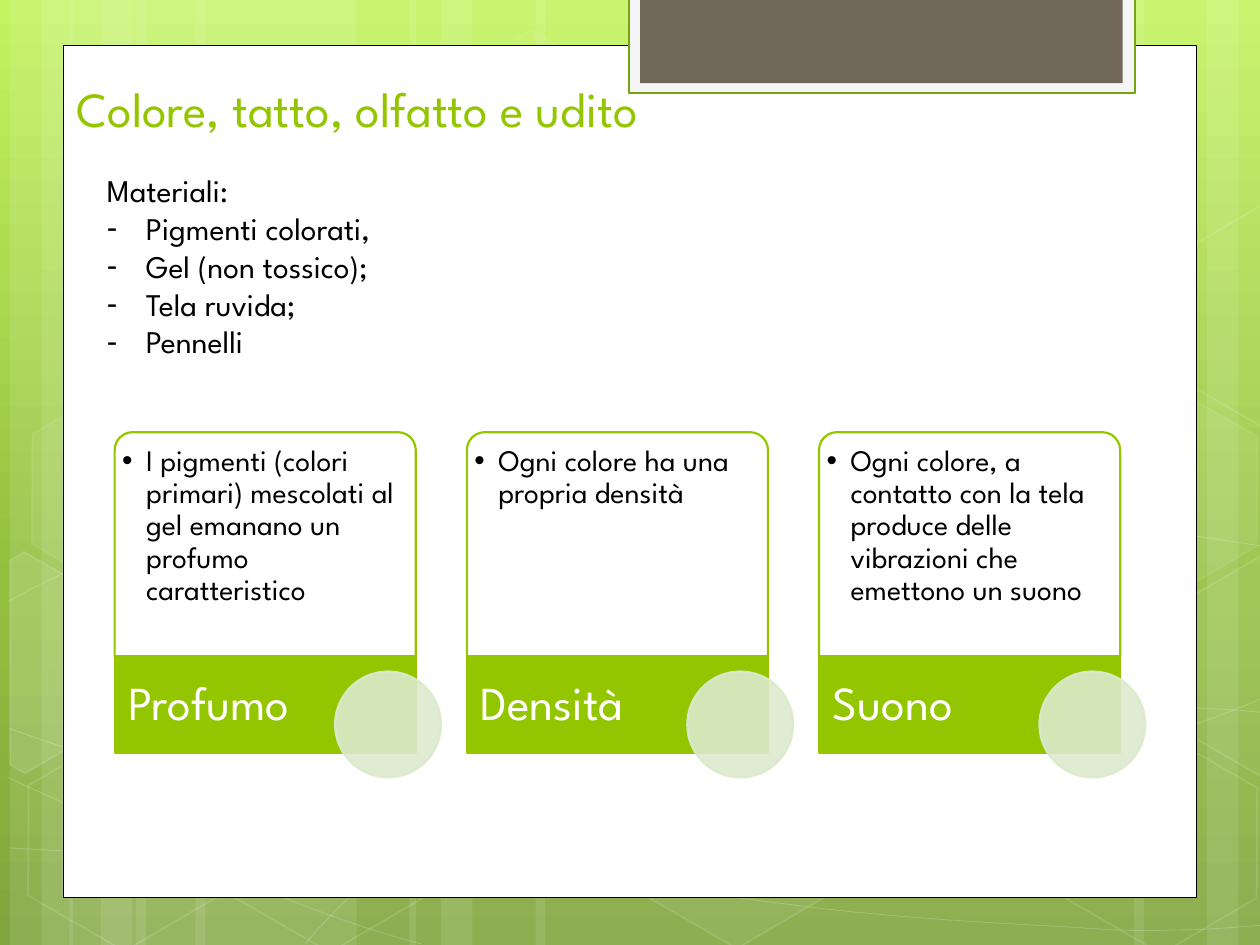
"""Build the slide on colour, touch, smell and hearing, with three captioned cards."""
from copy import deepcopy

from lxml import etree
from pptx import Presentation
from pptx import util as u
from pptx.dml.color import RGBColor
from pptx.enum import shapes, text
from pptx.oxml.ns import qn

FONT = "League Spartan"
GREEN, WHITE, BLACK, MIST = "94C600", "FFFFFF", "000000", "DCEACC"
PRESET = shapes.MSO_SHAPE
rgb = RGBColor.from_string

prs = Presentation()
prs.slide_width, prs.slide_height = u.Inches(10), u.Inches(7.5)
cell = prs.slide_width / 10
columns, rows = 10, prs.slide_height / cell
slide = prs.slides.add_slide(prs.slide_layouts[5])


def draw(outline, box=None, fill=None, fill_alpha=100, line=None, width=1, line_alpha=100, closed=True):
    """Add a preset in a grid box, or an outline through grid points, and paint it."""
    if box:
        shape = slide.shapes.add_shape(outline, *(round(v * cell) for v in box))
    else:
        (x, y), *rest = [(px * cell, py * cell) for px, py in outline]
        builder = slide.shapes.build_freeform(x, y)
        builder.add_line_segments(rest, close=closed)
        shape = builder.convert_to_shape()
    shape.shadow.inherit = False
    shape.line.width = u.Pt(width)
    paints = ((shape.fill, fill, fill_alpha, "./a:solidFill/a:srgbClr"),
              (shape.line.fill, line, line_alpha, "./a:ln/a:solidFill/a:srgbClr"))
    for paint, colour, alpha, where in paints:
        if colour is None:
            paint.background()
            continue
        paint.solid()
        paint.fore_color.rgb = rgb(colour)
        if alpha < 100:
            mark = shape._element.spPr.xpath(where)[0]
            etree.SubElement(mark, qn("a:alpha"), val=str(alpha * 1000))
    return shape


def write(box, lines, size, colour, margins=(0.1, 0.05, 0.1, 0.05), spacing=1.0, bullet=None, indent=0, first=0):
    """Add a text box in a grid box, with bullets from the paragraph numbered first."""
    frame = slide.shapes.add_textbox(*(round(v * cell) for v in box)).text_frame
    frame.word_wrap = True
    frame.margin_left, frame.margin_top, frame.margin_right, frame.margin_bottom = (
        round(m * cell) for m in margins)
    frame.text = "\n".join(lines)
    for number, paragraph in enumerate(frame.paragraphs):
        paragraph.line_spacing = spacing
        font = paragraph.runs[0].font
        font.name, font.size, font.color.rgb = FONT, u.Pt(size), rgb(colour)
        if bullet and number >= first:
            props = paragraph._p.get_or_add_pPr()
            props.set("marL", str(round(indent * cell)))
            props.set("indent", str(round(-indent * cell)))
            etree.SubElement(props, qn("a:buFont"), typeface="Arial")
            etree.SubElement(props, qn("a:buChar"), char=bullet)
    return frame


backdrop = slide.background.fill
backdrop.gradient()
backdrop.gradient_angle = 270
stops = next(slide._element.iter(qn("a:gsLst")))
stops.append(deepcopy(stops[-1]))
for stop, (position, colour) in zip(backdrop.gradient_stops, ((0, "C3F35F"), (0.62, "93BF3F"), (1, "81A53E"))):
    stop.position, stop.color.rgb = position, rgb(colour)

stripes = [(1.08, 1.75), (0.08, 0.5), (0.33, 0.83), (1.55, 1.75), (0.55, 0.5), (0.8, 0.83),
           (7.33, 1.75), (9.58, 0.5), (9, 0.83), (4.25, 3.08), (3.25, 0.5), (3.5, 0.83)]
for left, wide in stripes:
    draw(PRESET.RECTANGLE, (left, 0, wide, rows), WHITE, 10)

waves = [
    [(0.07, 6.73), (0.61, 6.76), (1.15, 6.79), (1.9, 6.78), (2.65, 6.77), (3.58, 6.75), (4.58, 6.65),
     (5.58, 6.55), (7, 6.36), (7.92, 6.17), (8.83, 5.98), (9.77, 5.68), (10.07, 5.51)],
    [(0.07, 4.77), (0.36, 4.61), (0.65, 4.46), (1.21, 4.31), (1.78, 4.16), (2.59, 3.94), (3.47, 3.87),
     (4.36, 3.8), (5.44, 3.79), (6.54, 3.87), (7.64, 3.95), (9.47, 4.26), (10.07, 4.34)],
    [(0.06, 6.17), (1.27, 6.72), (2.47, 7.27), (3.34, 7.49)],
    [(0.07, 5.78), (0.38, 5.89), (0.7, 6), (1.28, 6.16), (1.86, 6.31), (2.73, 6.56), (3.57, 6.73),
     (4.4, 6.9), (5.45, 7.08), (6.28, 7.18), (7.11, 7.29), (8, 7.33), (8.53, 7.36),
     (9.05, 7.4), (9.19, 7.38), (9.45, 7.38), (9.71, 7.37), (9.89, 7.35), (10.07, 7.34)],
    [(2.42, 7.49), (2.6, 7.29), (2.78, 7.09), (3.02, 6.91), (3.26, 6.73), (3.6, 6.53), (3.88, 6.39),
     (4.16, 6.25), (4.33, 6.19), (4.7, 6.09), (5.06, 5.99), (5.73, 5.85), (6.08, 5.78),
     (6.44, 5.71), (6.49, 5.71), (6.8, 5.69), (7.11, 5.66), (7.6, 5.63), (7.94, 5.62),
     (8.29, 5.61), (8.86, 5.62), (8.86, 5.62), (9.08, 5.62), (9.31, 5.62), (9.53, 5.62),
     (9.71, 5.63), (9.88, 5.64), (9.97, 5.65), (10.06, 5.66), (10.03, 5.65), (10.06, 5.66)],
]
for wave in waves:
    ribbon = draw(wave, line=WHITE, width=0.5, line_alpha=20, closed=False)
    segments = ribbon._element.spPr.xpath(".//a:lnTo")
    for knot in range(0, len(segments), 3):
        curve = etree.SubElement(segments[knot].getparent(), qn("a:cubicBezTo"))
        for segment in segments[knot:knot + 3]:
            curve.append(segment[0])
            segment.getparent().remove(segment)

hexagons = [(3.34, 0.36, 4, 8), (4.97, 5.89, 6, 12), (0.11, 5.91, 0, 12), (0.14, 3.12, 7, 8),
            (1.74, 5.92, 0, 12), (7.53, 4.53, 10, 12), (8.34, 5.93, 0, 12), (8.34, 3.14, 7, 8)]
for left, top, fill_alpha, line_alpha in hexagons:
    hexagon = draw(PRESET.HEXAGON, (left, top, 1.75, 1.52), WHITE if fill_alpha else None, fill_alpha,
                   WHITE, 1, line_alpha)
    hexagon.adjustments[0] = 0.285
    hexagon.rotation = 30

cut_hexagons = [
    ([(0.08, 4.45), (0.19, 4.38), (0.96, 4.82), (0.95, 5.7), (0.2, 6.14), (0.08, 6.07)], 10),
    ([(9.26, 4.85), (10.01, 4.41), (10.09, 4.46), (10.09, 6.13), (10.02, 6.17), (9.26, 5.73)], 4),
    ([(9.26, 2.07), (10.01, 1.63), (10.1, 1.68), (10.09, 3.35), (10.02, 3.39), (9.26, 2.95)], 0),
]
for corners, fill_alpha in cut_hexagons:
    draw(corners, None, WHITE if fill_alpha else None, fill_alpha, WHITE, 1, 12)

draw(PRESET.RECTANGLE, (0.5, 0.36, columns - 1, 6.76), WHITE, line=BLACK, width=0.5)
draw(PRESET.RECTANGLE, (4.99, -0.02, 4.02, 0.76), "F5F5F5", line="74A510", width=1.25)
draw(PRESET.RECTANGLE, (5.08, -0.02, 3.83, 0.68), "71685A")

title = slide.shapes.title
slide.shapes._spTree.append(title._element)
title.left, title.top, title.width, title.height = (round(v * cell) for v in (0.51, 0.36, 8.5, 0.78))
heading = title.text_frame
heading.text = "Colore, tatto, olfatto e udito"
heading.auto_size = text.MSO_AUTO_SIZE.NONE
heading.vertical_anchor = text.MSO_ANCHOR.BOTTOM
heading.paragraphs[0].alignment = text.PP_ALIGN.LEFT
heading_font = heading.paragraphs[0].runs[0].font
heading_font.name, heading_font.size, heading_font.color.rgb = FONT, u.Pt(28), rgb(GREEN)

cards = [
    ("Profumo", "I pigmenti (colori primari) mescolati al gel emanano un profumo caratteristico"),
    ("Densità", "Ogni colore ha una propria densità"),
    ("Suono", "Ogni colore, a contatto con la tela produce delle vibrazioni che emettono un suono"),
]
FIRST_LEFT, LAST_LEFT, CARD_WIDTH = 0.91, 6.5, 2.39
card_pitch = (LAST_LEFT - FIRST_LEFT) / (len(cards) - 1)
for number, (sense, detail) in enumerate(cards):
    left = FIRST_LEFT + number * card_pitch
    panel = draw(PRESET.ROUND_2_SAME_RECTANGLE, (left, 3.43, CARD_WIDTH, 1.78), WHITE, 90, GREEN, 1.25)
    panel.adjustments[0] = 0.08
    note = write((left + 0.04, 3.47, 2.31, 1.74), [detail], 17, BLACK, (0.02, 0.07, 0.02, 0.02), 0.9, "•", 0.19)
    note.paragraphs[0].level = 1
    draw(PRESET.RECTANGLE, (left, 5.21, CARD_WIDTH, 0.77), GREEN, line=GREEN, width=1.25)
    caption = write((left, 5.21, 1.68, 0.77), [sense], 27, WHITE, (0.11, 0, 0.04, 0), 0.9)
    caption.vertical_anchor = text.MSO_ANCHOR.MIDDLE
    draw(PRESET.OVAL, (left + 1.75, 5.33, 0.84, 0.84), MIST, 90, MIST, 1.25, 90)

materials = ["Materiali:", "Pigmenti colorati,", "Gel (non tossico);", "Tela ruvida;", "Pennelli"]
write((0.75, 1.31, 2.68, 1.62), materials, 18, BLACK, bullet="-", indent=0.31, first=1)

prs.save("out.pptx")
